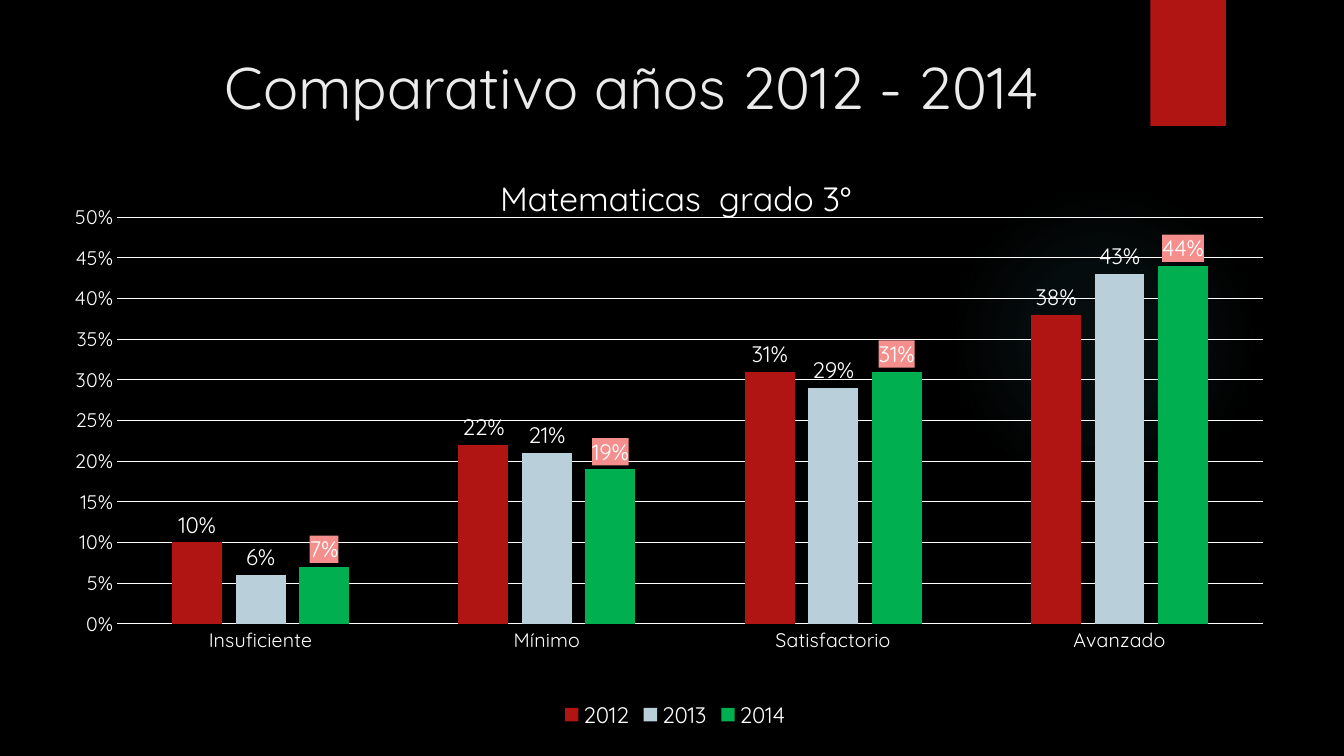
from lxml import etree
from pptx import Presentation
from pptx.chart.data import CategoryChartData
from pptx.dml.color import RGBColor
from pptx.enum.chart import XL_CHART_TYPE, XL_LABEL_POSITION, XL_LEGEND_POSITION, XL_TICK_MARK
from pptx.enum.shapes import MSO_SHAPE
from pptx.enum.text import MSO_ANCHOR
from pptx.oxml import parse_xml
from pptx.oxml.ns import nsdecls, qn
from pptx.util import Inches, Pt

COLUMNS = XL_CHART_TYPE.COLUMN_CLUSTERED
OUTSIDE = XL_LABEL_POSITION.OUTSIDE_END
BOTTOM = XL_LEGEND_POSITION.BOTTOM
NO_TICK = XL_TICK_MARK.NONE
RECT, OVAL = MSO_SHAPE.RECTANGLE, MSO_SHAPE.OVAL
MIDDLE = MSO_ANCHOR.MIDDLE

THEME = {
    "font": "Quicksand",
    "background": "000000", "accent": "B01513", "glow": "50B9C1",
    "title": "EBEBEB", "text": "FFFFFF", "highlight": "F58F8D",
    "series": {"2012": "B01513", "2013": "B9CFD9", "2014": "00B050"},
    "title_size": 42, "chart_title_size": 24, "label_size": 16, "axis_size": 14,
}


def set_font(font, size, color=THEME["text"]):
    font.name = THEME["font"]
    font.size = Pt(size)
    font.bold = False
    font.color.rgb = RGBColor.from_string(color)


def set_layout(parent, index, **values):
    for old in parent.findall(qn("c:layout")):
        parent.remove(old)
    layout = etree.Element(qn("c:layout"))
    manual = etree.SubElement(layout, qn("c:manualLayout"))
    for tag, value in values.items():
        etree.SubElement(manual, qn(f"c:{tag}")).set("val", str(value))
    parent.insert(index, layout)


prs = Presentation()
prs.slide_width, prs.slide_height = Inches(13.33), Inches(7.5)
s = prs.slides.add_slide(prs.slide_layouts[6])
s.background.fill.solid()
s.background.fill.fore_color.rgb = RGBColor.from_string(THEME["background"])

glow = s.shapes.add_shape(OVAL, Inches(9.41), Inches(1.83), Inches(3.08), Inches(3.08))
glow.shadow.inherit = False
glow.line.fill.background()
stops = "".join(
    f'<a:gs pos="{pos}000"><a:srgbClr val="{THEME["glow"]}"><a:alpha val="{alpha}000"/></a:srgbClr></a:gs>'
    for pos, alpha in [(0, 7), (36, 6), (69, 0)])
glow_fill = parse_xml(
    f'<a:gradFill {nsdecls("a")}><a:gsLst>{stops}</a:gsLst><a:path path="circle">'
    '<a:fillToRect l="50000" t="50000" r="50000" b="50000"/></a:path></a:gradFill>')
glow._element.spPr.find(qn("a:prstGeom")).addnext(glow_fill)

ribbon = s.shapes.add_shape(RECT, Inches(11.41), 0, Inches(0.75), Inches(1.25))
ribbon.shadow.inherit = False
ribbon.fill.solid()
ribbon.fill.fore_color.rgb = RGBColor.from_string(THEME["accent"])
ribbon.line.fill.background()

title = s.shapes.add_textbox(Inches(2.13), Inches(0.39), Inches(8.91), Inches(0.93))
tf = title.text_frame
tf.word_wrap = True
tf.vertical_anchor = MIDDLE
r = tf.paragraphs[0].add_run()
r.text = "Comparativo años 2012 - 2014"
set_font(r.font, THEME["title_size"], THEME["title"])

results = {
    "2012": (0.1, 0.22, 0.31, 0.38),
    "2013": (0.06, 0.21, 0.29, 0.43),
    "2014": (0.07, 0.19, 0.31, 0.44),
}
data = CategoryChartData(number_format="0%")
data.categories = ["Insuficiente", "Mínimo", "Satisfactorio", "Avanzado"]
for year, values in results.items():
    data.add_series(year, values)
chart = s.shapes.add_chart(
    COLUMNS, Inches(0.71), Inches(1.43), Inches(11.97), Inches(5.84), data).chart
set_font(chart.font, 10)

chart.has_title = True
p = chart.chart_title.text_frame.paragraphs[0]
r = p.add_run()
r.text = "Matematicas  grado 3°"
set_font(r.font, THEME["chart_title_size"])
chart.chart_title.include_in_layout = False
set_layout(chart.chart_title._element, 1, xMode="edge", yMode="edge", x=0.35, y=0.04)
set_layout(chart._chartSpace.chart.plotArea, 0, layoutTarget="inner",
           xMode="edge", yMode="edge", x=0.038, y=0.124, w=0.949, h=0.691)

chart.has_legend = True
chart.legend.position = BOTTOM
chart.legend.include_in_layout = False
set_font(chart.legend.font, THEME["label_size"])

white = RGBColor.from_string(THEME["text"])
for axis in (chart.category_axis, chart.value_axis):
    axis.major_tick_mark = axis.minor_tick_mark = NO_TICK
    set_font(axis.tick_labels.font, THEME["axis_size"])
chart.category_axis.format.line.color.rgb = white
chart.category_axis.format.line.width = Pt(0.75)
axis = chart.value_axis
axis.minimum_scale, axis.maximum_scale, axis.major_unit = 0, 0.5, 0.05
axis.tick_labels.number_format = "0%"
axis.tick_labels.number_format_is_linked = False
axis.format.line.fill.background()
axis.major_gridlines.format.line.color.rgb = white
axis.major_gridlines.format.line.width = Pt(0.75)

plot = chart.plots[0]
plot.gap_width, plot.overlap = 219, -27
plot.vary_by_categories = False
for series in plot.series:
    series.format.fill.solid()
    series.format.fill.fore_color.rgb = RGBColor.from_string(THEME["series"][series.name])
    labels = series.data_labels
    labels.show_value = True
    labels.position = OUTSIDE
    labels.number_format = "0%"
    labels.number_format_is_linked = False
    set_font(labels.font, THEME["label_size"])

label_fill = parse_xml(
    f'<c:spPr {nsdecls("c", "a")}><a:solidFill><a:srgbClr val="{THEME["highlight"]}"/>'
    '</a:solidFill></c:spPr>')
labels._element.find(qn("c:txPr")).addprevious(label_fill)

prs.save("out.pptx")
